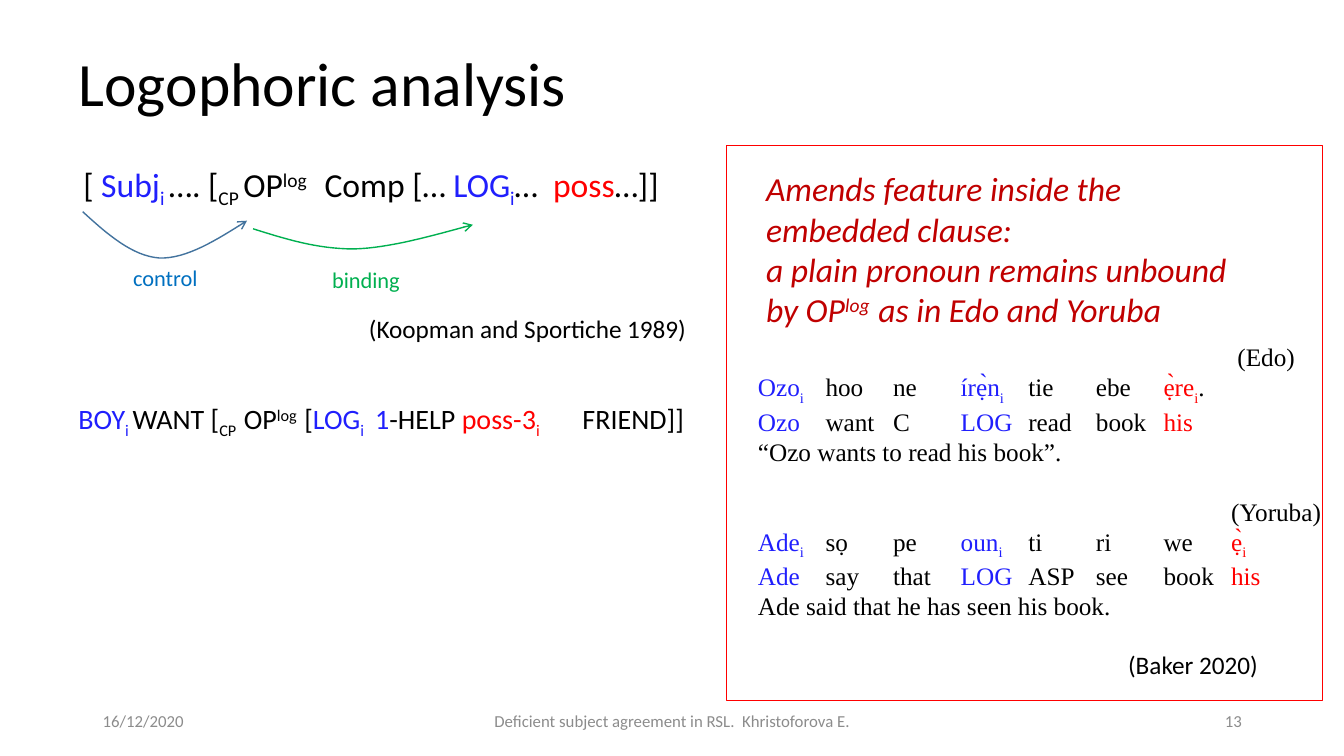
from lxml.etree import SubElement
from pptx import Presentation
from pptx.dml.color import RGBColor
from pptx.enum.shapes import MSO_SHAPE
from pptx.enum.text import MSO_ANCHOR, PP_ALIGN
from pptx.oxml.ns import qn
from pptx.util import Inches, Pt

BLACK = RGBColor(0, 0, 0)
BLUE = RGBColor(0x20, 0x1F, 0xFD)
RED = RGBColor(0xFF, 0, 0)
WINE = RGBColor(0xC0, 0, 0)
STEEL = RGBColor(0x43, 0x73, 0x9E)
SKY = RGBColor(0, 0x70, 0xC0)
GREEN = RGBColor(0, 0xB0, 0x50)
GREY = RGBColor(0x8C, 0x8C, 0x8C)
SUB, SUP = -25, 30
SERIF = "Times New Roman"
LEFT, MID, RIGHT = PP_ALIGN.LEFT, PP_ALIGN.CENTER, PP_ALIGN.RIGHT
COLS = ROWS = 100


class Deck:
    font = "Calibri"

    def __init__(self, wide, high):
        self.show = Presentation()
        self.show.slide_width = Inches(wide)
        self.show.slide_height = Inches(high)
        self.col = self.show.slide_width / COLS
        self.row = self.show.slide_height / ROWS
        self.page = self.show.slides.add_slide(self.show.slide_layouts[5])

    def spot(self, x, y):
        return round(x * self.col), round(y * self.row)

    def box(self, x, y, w, h):
        return self.spot(x, y) + self.spot(w, h)

    def fill(self, para, runs, size, ink=BLACK, font=None, slant=False):
        for words, *look in runs:
            run = para.add_run()
            run.text = words
            run.font.size = Pt(size)
            run.font.name = font or self.font
            run.font.italic = slant
            run.font.color.rgb = look[0] if look else ink
            if len(look) > 1:
                run._r.get_or_add_rPr().set("baseline", str(look[1] * 1000))

    def tabs(self, para, step, count):
        stops = SubElement(para._p.get_or_add_pPr(), qn("a:tabLst"))
        for n in range(1, count + 1):
            SubElement(stops, qn("a:tab"), pos=str(round(n * step * self.col)), algn="l")

    def title(self, area, words):
        head = self.page.shapes.title
        head.left, head.top, head.width, head.height = self.box(*area)
        head.text_frame.vertical_anchor = MSO_ANCHOR.MIDDLE
        para = head.text_frame.paragraphs[0]
        para.alignment = LEFT
        para.line_spacing = 0.9
        self.fill(para, [(words,)], 44)

    def text(self, area, lines, size, align=LEFT, anchor=MSO_ANCHOR.TOP,
             wrap=True, tabs=None, gaps=None, **style):
        frame = self.page.shapes.add_textbox(*self.box(*area)).text_frame
        frame.word_wrap = wrap
        frame.vertical_anchor = anchor
        for n, runs in enumerate(lines):
            para = frame.add_paragraph() if n else frame.paragraphs[0]
            para.alignment = align
            if gaps and n in gaps:
                para.space_before = Pt(gaps[n])
            if tabs:
                self.tabs(para, *tabs)
            self.fill(para, runs, size, **style)

    def label(self, area, words, size, **style):
        self.text(area, [[(words,)]], size, **style)

    def frame(self, area, ink):
        rect = self.page.shapes.add_shape(MSO_SHAPE.RECTANGLE, *self.box(*area))
        self.trim(rect, ink, 0.75)

    def trim(self, shape, ink, width):
        shape.shadow.inherit = False
        shape.fill.background()
        shape.line.color.rgb = ink
        shape.line.width = Pt(width)

    def curve(self, start, bends, ink, steps=16):
        dots = []
        last = start
        for a, b, end in bends:
            for n in range(1, steps + 1):
                t = n / steps
                u = 1 - t
                mix = zip(last, a, b, end)
                dots.append(self.spot(*(
                    u**3 * p + 3 * u * u * t * q + 3 * u * t * t * r + t**3 * s
                    for p, q, r, s in mix)))
            last = end
        pen = self.page.shapes.build_freeform(*self.spot(*start))
        pen.add_line_segments(dots, close=False)
        arc = pen.convert_to_shape()
        self.trim(arc, ink, 1)
        line = arc.line._get_or_add_ln()
        SubElement(line, qn("a:tailEnd"), type="arrow")

    def foot(self, x, y, gap, cells):
        for words, width, align in cells:
            self.label((x, y, width, 5.33), words, 12, ink=GREY, align=align,
                       anchor=MSO_ANCHOR.MIDDLE)
            x += width + gap


def main():
    deck = Deck(13.33, 7.5)
    deck.title((5.1, 1.73, 86.25, 19.33), "Logophoric analysis")

    deck.text((3.15, 21.33, 48.9, 6.67), [[
        ("[ ",), ("Subj", BLUE), ("i ", BLUE, SUB), ("…. [",), ("CP ", BLACK, SUB),
        ("OP",), ("log    ", BLACK, SUP), ("Comp [… ",), ("LOG", BLUE),
        ("i", BLUE, SUB), ("…  ",), ("poss", RED), ("…]]",)]],
        24, align=MID, anchor=MSO_ANCHOR.MIDDLE)
    deck.curve((6.15, 28), [
        ((7.95, 30.93), (9.83, 33.87), (11.85, 34.13)),
        ((13.88, 34.27), (16.13, 31.73), (18.38, 29.2))], STEEL)
    deck.curve((18.83, 30.27), [
        ((21.23, 31.6), (23.56, 32.93), (26.33, 32.93)),
        ((29.03, 32.8), (32.11, 31.2), (35.18, 29.73))], GREEN)
    for words, x, y, ink in (("binding", 17.93, 34.53, GREEN), ("control", 3, 34.27, SKY)):
        deck.label((x, y, 18.6, 4.93), words, 16, ink=ink, align=MID,
                   anchor=MSO_ANCHOR.MIDDLE)
    deck.label((26.71, 40.8, 25.88, 5.33), "(Koopman and Sportiche 1989)", 18, wrap=False)

    deck.text((5.1, 52.5, 50, 5.8), [[
        ("BOY", BLUE), ("i ", BLUE, SUB), ("WANT [",), ("CP  ", BLACK, SUB),
        ("OP",), ("log  ", BLACK, SUP), ("[",), ("LOG", BLUE), ("i   ", BLUE, SUB),
        ("1", BLUE), ("-HELP ",), ("poss-3", RED), ("i ", RED, SUB),
        ("\tFRIEND]]",)]], 20, tabs=(7.5, 5))

    deck.text((56.26, 21.6, 38.03, 22.93), [
        [("Amends feature inside the embedded clause:",)],
        [("a plain pronoun remains unbound by OP",), ("log  ", WINE, SUP),
         ("as in Edo and Yoruba",)]], 24, ink=WINE, slant=True)

    deck.text((55.66, 44.5, 43.6, 37.8), [
        [("\t\t\t\t\t\t\t (Edo)",)],
        [("Ozo", BLUE), ("i", BLUE, SUB), ("\thoo\tne\t",), ("írẹ̀n", BLUE),
         ("i", BLUE, SUB), ("\ttie\tebe\t",), ("ẹ̀re", RED), ("i", RED, SUB), (".",)],
        [("Ozo", BLUE), ("\twant\tC\t",), ("LOG", BLUE), ("\tread\tbook\t",),
         ("his", RED)],
        [("“Ozo wants to read his book”.",)],
        [("\t\t\t\t\t\t\t(Yoruba)",)],
        [("Ade", BLUE), ("i", BLUE, SUB), ("\tsọ\tpe\t",), ("oun", BLUE),
         ("i", BLUE, SUB), ("\tti\tri\twe\t",), ("ẹ̀", RED), ("i", RED, SUB)],
        [("Ade", BLUE), ("\tsay\tthat\t",), ("LOG", BLUE), ("\tASP\tsee\tbook\t",),
         ("his", RED)],
        [("Ade said that he has seen his book.",)]],
        18, font=SERIF, tabs=(5.03, 7), gaps={4: 21})
    deck.label((83.2, 85.2, 11.7, 5.33), "(Baker 2020)", 18, wrap=False)
    deck.frame((54.09, 19.2, 44.34, 73.47), RED)

    deck.foot(6.9, 92.67, 3.75, (
        ("16/12/2020", 22.5, LEFT),
        ("Deficient subject agreement in RSL.  Khristoforova E.", 33.75, MID),
        ("13", 22.5, RIGHT)))
    deck.show.save("out.pptx")


if __name__ == "__main__":
    main()
